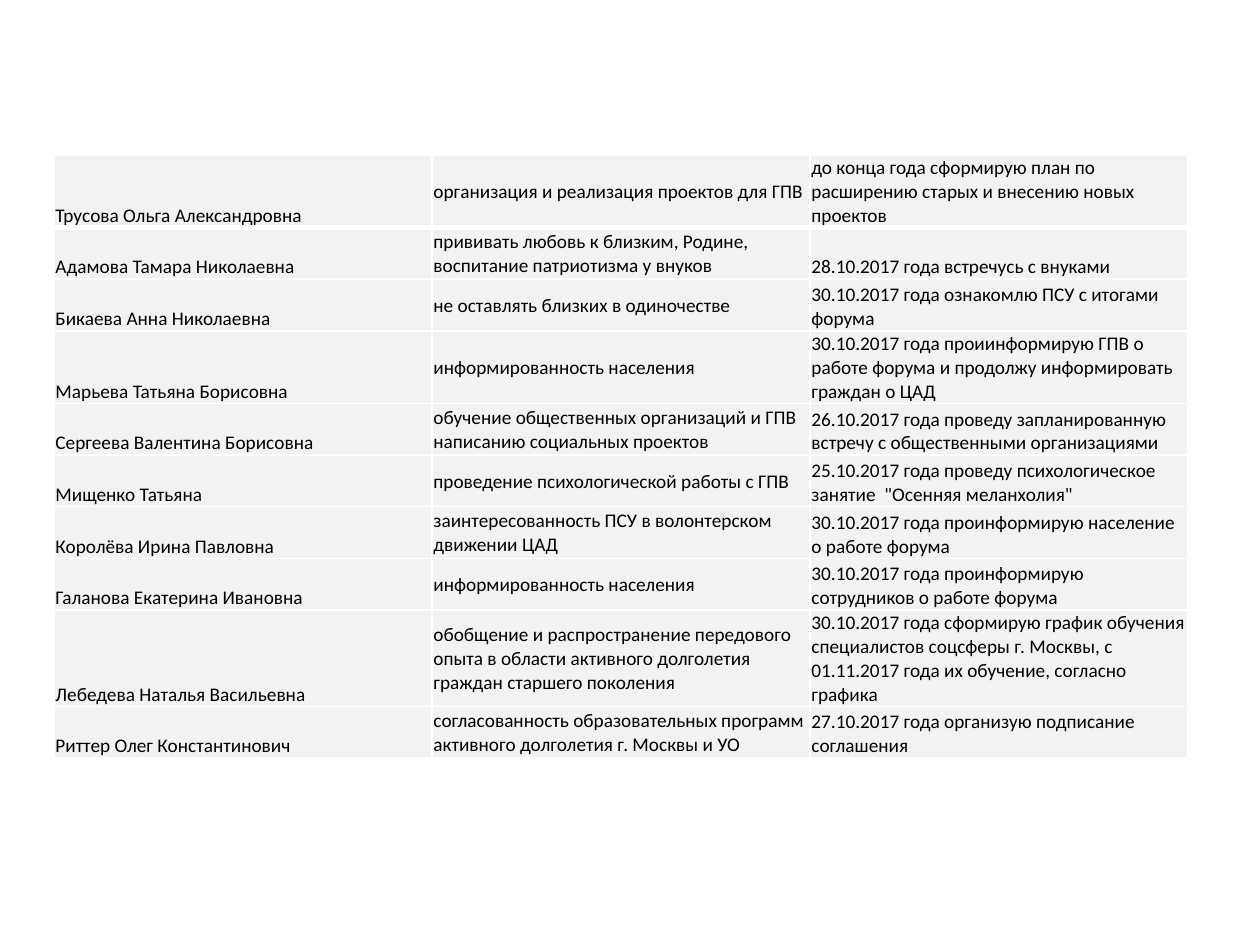
"""Build a slide with a table of participants, their goals and planned steps."""
from lxml import etree
from pptx import Presentation
from pptx.dml.color import RGBColor
from pptx.enum import text
from pptx.oxml import ns
from pptx.util import Inches, Pt

BLACK = RGBColor(0x00, 0x00, 0x00)
WHITE = RGBColor(0xFF, 0xFF, 0xFF)
LIGHT_GREY = RGBColor(0xF2, 0xF2, 0xF2)

PLANS = [
    ("Трусова Ольга Александровна", "организация и реализация проектов для ГПВ",
     "до конца года сформирую план по расширению старых и внесению новых проектов"),
    ("Адамова Тамара Николаевна",
     "прививать любовь к близким, Родине, воспитание патриотизма у внуков",
     "28.10.2017 года встречусь с внуками"),
    ("Бикаева Анна Николаевна", "не оставлять близких в одиночестве",
     "30.10.2017 года ознакомлю ПСУ с итогами форума"),
    ("Марьева Татьяна Борисовна", "информированность населения",
     "30.10.2017 года проиинформирую ГПВ о работе форума и продолжу "
     "информировать граждан о ЦАД"),
    ("Сергеева Валентина Борисовна",
     "обучение общественных организаций и ГПВ написанию социальных проектов",
     "26.10.2017 года проведу запланированную встречу с общественными организациями"),
    ("Мищенко Татьяна", "проведение психологической работы с ГПВ",
     "25.10.2017 года проведу психологическое  занятие  \"Осенняя меланхолия\""),
    ("Королёва Ирина Павловна", "заинтересованность ПСУ в волонтерском движении ЦАД",
     "30.10.2017 года проинформирую население о работе форума"),
    ("Галанова Екатерина Ивановна", "информированность населения",
     "30.10.2017 года проинформирую сотрудников о работе форума"),
    ("Лебедева Наталья Васильевна",
     "обобщение и распространение передового опыта в области активного "
     "долголетия граждан старшего поколения",
     "30.10.2017 года сформирую график обучения специалистов соцсферы г. Москвы, "
     "с 01.11.2017 года их обучение, согласно графика"),
    ("Риттер Олег Константинович",
     "согласованность образовательных программ активного долголетия г. Москвы и УО",
     "27.10.2017 года организую подписание соглашения"),
]
ROW_HEIGHTS = [0.56, 0.41, 0.41, 0.56, 0.41, 0.41, 0.41, 0.41, 0.74, 0.41]
COLUMN_WIDTH = 3
ANCHORS = [text.MSO_ANCHOR.BOTTOM, text.MSO_ANCHOR.MIDDLE, text.MSO_ANCHOR.BOTTOM]


def add_borders(cell, widths):
    properties = cell._tc.get_or_add_tcPr()
    for side, width in widths.items():
        line = etree.SubElement(properties, ns.qn(f"a:ln{side}"), w=str(Pt(width)))
        fill = etree.SubElement(line, ns.qn("a:solidFill"))
        etree.SubElement(fill, ns.qn("a:srgbClr"), val=str(WHITE))


def fill_cell(cell, wording, anchor, borders):
    add_borders(cell, borders)
    cell.fill.solid()
    cell.fill.fore_color.rgb = LIGHT_GREY
    cell.vertical_anchor = anchor
    cell.margin_left = cell.margin_top = cell.margin_right = Inches(0.01)
    cell.margin_bottom = 0
    cell.text_frame.text = wording
    font = cell.text_frame.paragraphs[0].runs[0].font
    font.name = "Calibri"
    font.size = Pt(11)
    font.bold = False
    font.color.rgb = BLACK


def main():
    presentation = Presentation()
    presentation.slide_width, presentation.slide_height = Inches(10), Inches(7.5)
    slide = presentation.slides.add_slide(presentation.slide_layouts[6])
    table = slide.shapes.add_table(
        len(PLANS), len(ANCHORS), Inches(0.43), Inches(1.23),
        Inches(COLUMN_WIDTH * len(ANCHORS)), Inches(sum(ROW_HEIGHTS))).table
    table.first_row = table.horz_banding = False
    for column in table.columns:
        column.width = Inches(COLUMN_WIDTH)
    for index, (plan, height) in enumerate(zip(PLANS, ROW_HEIGHTS)):
        table.rows[index].height = Inches(height)
        borders = {"L": 1, "R": 1, "T": 3 if index == 1 else 1, "B": 3 if index == 0 else 1}
        for cell, wording, anchor in zip(table.rows[index].cells, plan, ANCHORS):
            fill_cell(cell, wording, anchor, borders)
    presentation.save("out.pptx")


if __name__ == "__main__":
    main()
